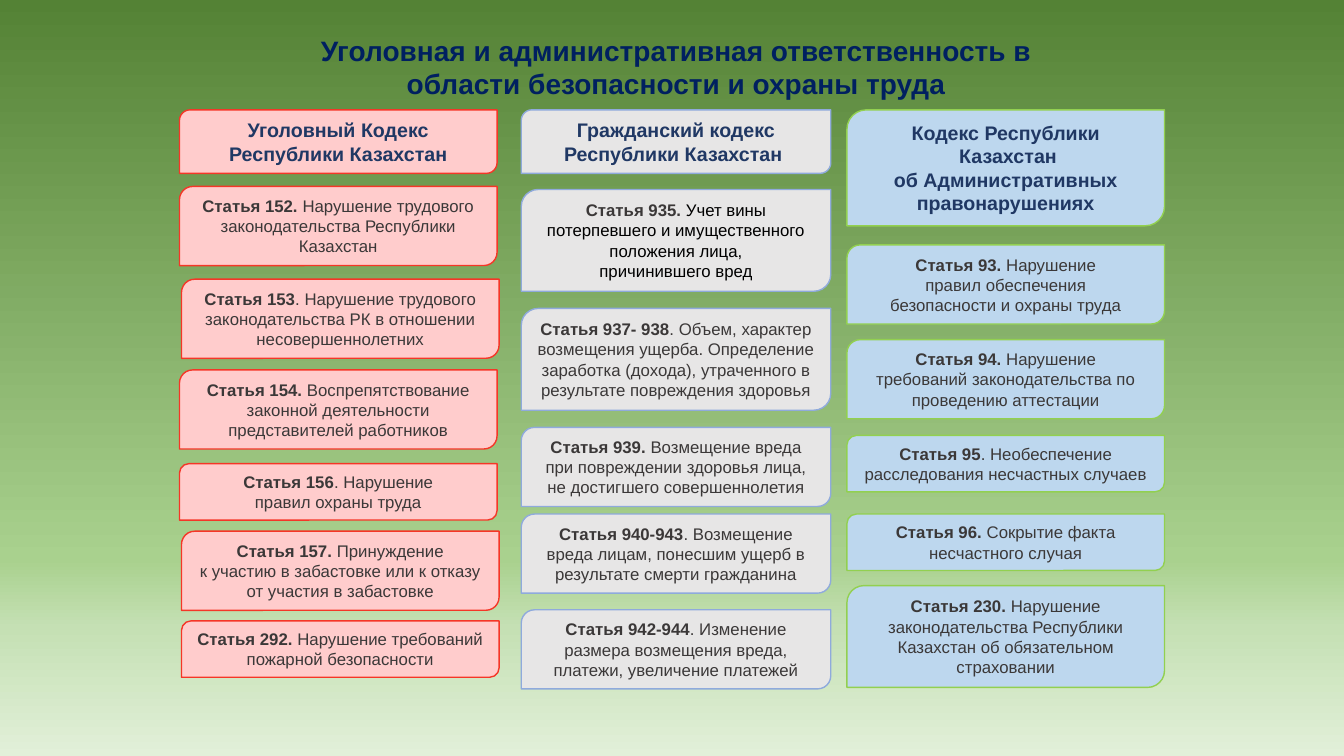
from dataclasses import dataclass

from lxml import etree
from pptx import Presentation
from pptx.dml.color import RGBColor
from pptx.enum import shapes, text
from pptx.oxml import ns
from pptx.util import Inches, Pt

FONT = "Arial"
COLORS = {
    "title": "002060", "heading": "203864", "body": "3B3838", "black": "000000",
    "red_fill": "FFCCCC", "red_line": "F53627",
    "gray_fill": "E7E6E6", "gray_line": "8FAADC",
    "blue_fill": "BDD7EE", "blue_line": "92D050",
}
BACKGROUND = [(0, "548235"), (74, "A9D18E"), (83, "C5E0B4"), (100, "E2F0D9")]
TITLE = "Уголовная и административная ответственность в области безопасности и охраны труда"


@dataclass
class Article:
    top: float
    lines: int
    label: str
    body: str  # a newline starts a new paragraph
    shift: float = 0
    color: str = "body"


# left, width, palette, heading paragraphs, heading line count, articles
CODES = [
    (1.78, 3.15, "red", ["Уголовный Кодекс", "Республики Казахстан"], 2, [
        Article(1.85, 3, "Статья 152. ",
                "Нарушение трудового законодательства Республики Казахстан"),
        Article(2.77, 3, "Статья 153",
                ". Нарушение трудового законодательства РК в отношении несовершеннолетних",
                shift=0.02),
        Article(3.67, 3, "Статья 154. ",
                "Воспрепятствование законной деятельности представителей работников"),
        Article(4.6, 2, "Статья 156", ". Нарушение\nправил охраны труда"),
        Article(5.27, 3, "Статья 157. ",
                "Принуждение\nк участию в забастовке или к отказу от участия в забастовке",
                shift=0.02),
        Article(6.16, 2, "Статья 292. ", "Нарушение требований пожарной безопасности",
                shift=0.02),
    ]),
    (5.17, 3.07, "gray", ["Гражданский кодекс", "Республики Казахстан "], 2, [
        Article(1.88, 4, "Статья 935. ",
                "Учет вины потерпевшего и имущественного положения лица,\nпричинившего вред",
                color="black"),
        Article(3.06, 4, "Статья 937- 938",
                ". Объем, характер возмещения ущерба. Определение заработка (дохода), "
                "утраченного в результате повреждения здоровья"),
        Article(4.24, 3, "Статья 939. ",
                "Возмещение вреда при повреждении здоровья лица, "
                "не достигшего совершеннолетия"),
        Article(5.1, 3, "Статья 940-943",
                ". Возмещение вреда лицам, понесшим ущерб в результате смерти гражданина"),
        Article(6.05, 3, "Статья 942-944",
                ". Изменение размера возмещения вреда, платежи, увеличение платежей"),
    ]),
    (8.4, 3.15, "blue",
     ["Кодекс Республики Казахстан ", "об Административных", "правонарушениях"], 4, [
        Article(2.43, 3, "Статья 93. ",
                "Нарушение\nправил обеспечения\nбезопасности и охраны труда"),
        Article(3.37, 3, "Статья 94. ",
                "Нарушение\nтребований законодательства по проведению аттестации"),
        Article(4.32, 2, "Статья 95", ". Необеспечение расследования несчастных случаев"),
        Article(5.1, 2, "Статья 96. ", "Сокрытие факта несчастного случая"),
        Article(5.81, 4, "Статья 230. ",
                "Нарушение законодательства Республики Казахстан об обязательном страховании"),
    ]),
]
HEADING_TOP = 1.09
PADDING, HEADING_LINE, BODY_LINE = 0.11, 0.26, 0.225


def rgb(name):
    return RGBColor.from_string(COLORS[name])


def set_background(slide):
    fill = slide.background.fill
    fill.gradient()
    fill.gradient_angle = 270
    stops = slide.element.find(".//" + ns.qn("a:gsLst"))
    for stop in list(stops):
        stops.remove(stop)
    for percent, color in BACKGROUND:
        stop = etree.SubElement(stops, ns.qn("a:gs"), pos=str(percent * 1000))
        etree.SubElement(stop, ns.qn("a:srgbClr"), val=color)


def format_paragraph(p, size, color, bold):
    p.alignment = text.PP_ALIGN.CENTER
    p.font.name = FONT
    p.font.size = Pt(size)
    p.font.bold = bold
    p.font.color.rgb = rgb(color)


def add_card(slide, left, top, width, height, palette):
    sp = slide.shapes.add_shape(shapes.MSO_SHAPE.ROUND_2_DIAG_RECTANGLE,
                                Inches(left), Inches(top), Inches(width), Inches(height))
    sp.shadow.inherit = False
    sp.fill.solid()
    sp.fill.fore_color.rgb = rgb(palette + "_fill")
    sp.line.color.rgb = rgb(palette + "_line")
    sp.line.width = Pt(1)
    tf = sp.text_frame
    tf.word_wrap = True
    tf.vertical_anchor = text.MSO_ANCHOR.MIDDLE
    return tf


def fill_paragraphs(tf, lines, size, color, bold):
    tf.text = "\n".join(lines)
    for p in tf.paragraphs:
        format_paragraph(p, size, color, bold)


def add_heading(slide, left, width, palette, lines, count):
    height = PADDING + HEADING_LINE * count
    tf = add_card(slide, left, HEADING_TOP, width, height, palette)
    fill_paragraphs(tf, lines, 14, "heading", True)
    for p in tf.paragraphs:
        pPr = p._p.get_or_add_pPr()
        pPr.set("marL", str(Inches(0.1)))
        pPr.set("indent", str(-Inches(0.1)))


def add_article(slide, left, width, palette, article):
    height = PADDING + BODY_LINE * article.lines
    tf = add_card(slide, left + article.shift, article.top, width, height, palette)
    first, *rest = article.body.split("\n")
    fill_paragraphs(tf, [article.label, *rest], 12, article.color, False)
    p = tf.paragraphs[0]
    label = p.runs[0]
    label.font.bold = True
    label.font.color.rgb = rgb("body")
    p.add_run().text = first


def add_title(slide):
    title = slide.shapes.title
    title.left, title.top = Inches(2.53), Inches(0.28)
    title.width, title.height = Inches(8.35), Inches(0.71)
    tf = title.text_frame
    tf.text = TITLE
    tf.word_wrap = True
    tf.auto_size = text.MSO_AUTO_SIZE.NONE
    tf.vertical_anchor = text.MSO_ANCHOR.TOP
    tf.margin_left = tf.margin_right = Inches(0.3)
    format_paragraph(tf.paragraphs[0], 20, "title", True)


def main():
    prs = Presentation()
    prs.slide_width, prs.slide_height = Inches(13.33), Inches(7.5)
    slide = prs.slides.add_slide(prs.slide_layouts[5])
    set_background(slide)
    add_title(slide)
    for left, width, palette, heading, count, articles in CODES:
        add_heading(slide, left, width, palette, heading, count)
        for article in articles:
            add_article(slide, left, width, palette, article)
    prs.save("out.pptx")


if __name__ == "__main__":
    main()
